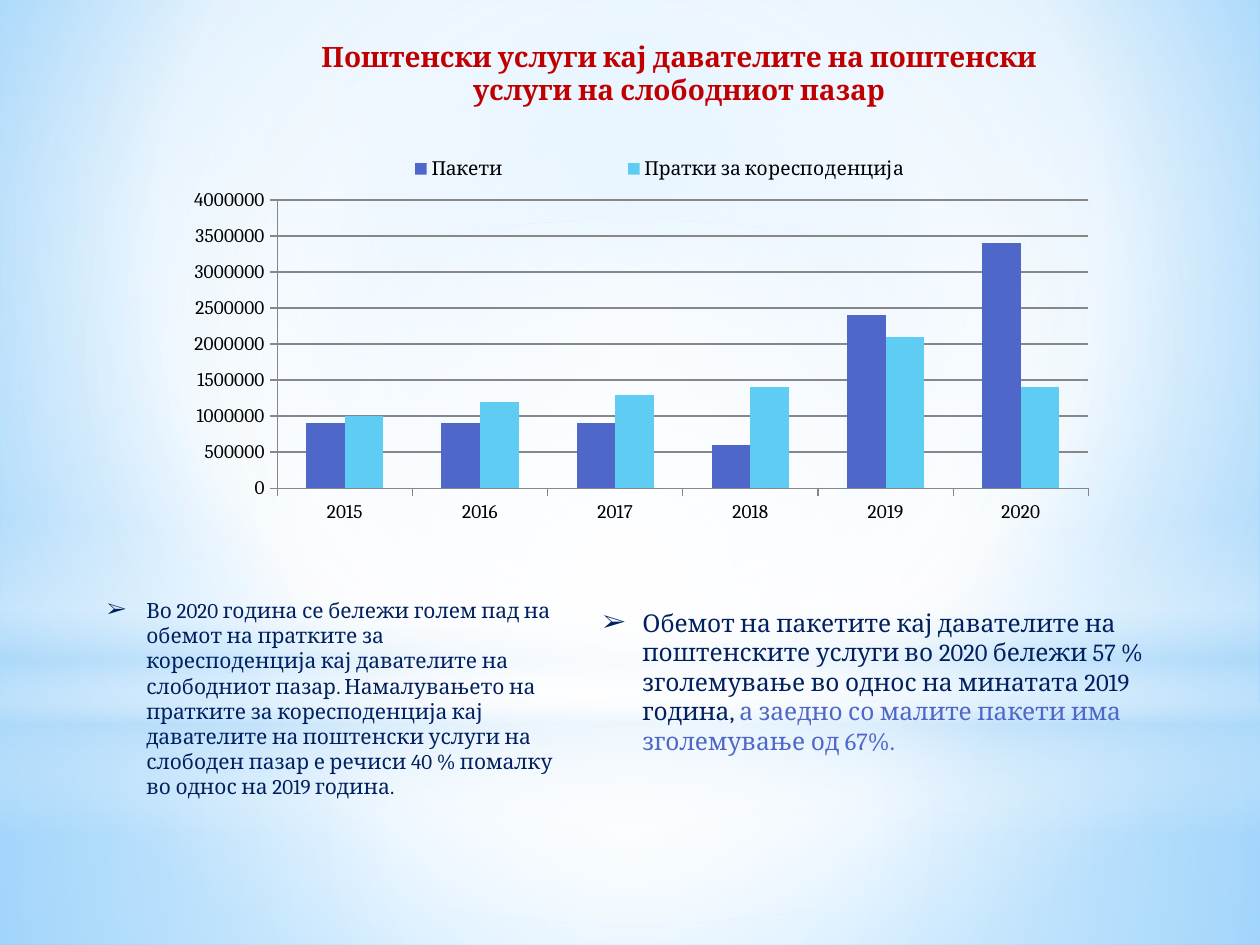
from dataclasses import dataclass

from lxml import etree
from pptx import Presentation
from pptx import util as u
from pptx.chart.data import CategoryChartData
from pptx.dml.color import RGBColor
from pptx.enum import chart as ch, shapes, text
from pptx.oxml import parse_xml
from pptx.oxml.ns import nsdecls, qn


@dataclass(frozen=True)
class Theme:
    font: str = "Cambria"
    chart_font: str = "Roboto"
    title: str = "C00000"
    body: str = "002060"
    parcels: str = "4E67C8"
    letters: str = "5ECCF3"
    grid: str = "878787"
    black: str = "000000"
    white: str = "FFFFFF"
    haze: str = "B4DCFA"
    sky: str = "9ED5FF"
    deep_sky: str = "5BB9FF"
    title_size: int = 16
    chart_base_size: int = 18
    chart_size: int = 11
    left_size: int = 12
    right_size: int = 14


T = Theme()
rgb = RGBColor.from_string


def paint(fill, owner, stops, focus=None):
    """Fill with (position, colour, opacity) stops: radial round focus, else downwards."""
    fill.gradient()
    grad = next(owner.iter(qn("a:gradFill")))
    gs = "".join(
        f'<a:gs pos="{pos * 1000}"><a:srgbClr val="{color}">'
        f'<a:alpha val="{alpha * 1000}"/></a:srgbClr></a:gs>'
        for pos, color, alpha in stops)
    if focus:
        sides = " ".join(f'{k}="{v * 1000}"' for k, v in zip("ltrb", focus))
        shade = f'<a:path path="circle"><a:fillToRect {sides}/></a:path>'
    else:
        shade = '<a:lin ang="5400000" scaled="0"/>'
    grad.getparent().replace(grad, parse_xml(
        f'<a:gradFill {nsdecls("a")} rotWithShape="1">'
        f'<a:gsLst>{gs}</a:gsLst>{shade}</a:gradFill>'))


def chart_layout(x, y, w, h, inner=False):
    """Manual chart layout, in fractions of the chart area."""
    target = '<c:layoutTarget val="inner"/>' if inner else ""
    return parse_xml(
        f'<c:layout {nsdecls("c")}><c:manualLayout>{target}'
        '<c:xMode val="edge"/><c:yMode val="edge"/>'
        f'<c:x val="{x}"/><c:y val="{y}"/><c:w val="{w}"/><c:h val="{h}"/>'
        '</c:manualLayout></c:layout>')


prs = Presentation()
prs.slide_width, prs.slide_height = u.Cm(25.4), u.Cm(19.05)
s = prs.slides.add_slide(prs.slide_layouts[5])

# Background: a sky with soft bands of light
bg = s.background.fill
paint(bg, s.element, [(0, T.sky, 100), (60, T.white, 100), (100, T.deep_sky, 100)],
      (20, 10, 20, 60))

centre = (50, 50, 50, 50)
rect, oval = shapes.MSO_SHAPE.RECTANGLE, shapes.MSO_SHAPE.OVAL
lights = [
    (rect, 14.17, 4.88, [(0, T.white, 91), (37, T.white, 76), (100, T.haze, 79)], centre),
    (rect, 0, 14.17, [(0, T.white, 89), (48, T.white, 62), (100, T.haze, 79)], centre),
    (rect, 10.46, 6.35, [(0, T.white, 0), (29, T.white, 30), (45, T.haze, 40),
                         (55, T.white, 26), (65, T.haze, 60), (100, T.white, 0)], None),
    (oval, 4.45, 14.17, [(0, T.white, 100), (56, T.white, 0)], centre),
]
for kind, top, height, stops, focus in lights:
    sp = s.shapes.add_shape(kind, 0, u.Cm(top), prs.slide_width, u.Cm(height))
    sp.shadow.inherit = False
    sp.line.fill.background()
    paint(sp.fill, sp.element, stops, focus)

# Title, brought in front of the bands
title = s.shapes.title
s.shapes.element.append(title.element)
title.left, title.top, title.width, title.height = map(u.Cm, (6.1, 0.66, 15.19, 1.63))
tf = title.text_frame
tf.text = "Поштенски услуги кај давателите на поштенски услуги на слободниот пазар"
tf.word_wrap = True
tf.auto_size = text.MSO_AUTO_SIZE.SHAPE_TO_FIT_TEXT
tf.vertical_anchor = text.MSO_ANCHOR.TOP
p = tf.paragraphs[0]
p.alignment = text.PP_ALIGN.CENTER
p.font.name, p.font.size, p.font.bold = T.font, u.Pt(T.title_size), True
p.font.color.rgb = rgb(T.title)

# Chart
data = CategoryChartData(number_format="0")
data.categories = [str(year) for year in range(2015, 2021)]
data.add_series("Пакети", [900000, 900000, 900000, 600000, 2400000, 3400000])
data.add_series("Пратки за коресподенција",
                [1000000, 1200000, 1300000, 1400000, 2100000, 1400000])
chart = s.shapes.add_chart(ch.XL_CHART_TYPE.COLUMN_CLUSTERED, u.Cm(3.52), u.Cm(2.94),
                           u.Cm(18.8), u.Cm(8.42), data).chart
chart.has_title = False
chart.font.name, chart.font.size = T.chart_font, u.Pt(T.chart_base_size)
chart.font.color.rgb = rgb(T.black)

plot = chart.plots[0]
plot.gap_width, plot.overlap, plot.vary_by_categories = 150, 0, False
for series, color in zip(plot.series, (T.parcels, T.letters)):
    series.format.fill.solid()
    series.format.fill.fore_color.rgb = rgb(color)

chart.has_legend = True
legend = chart.legend
legend.position = ch.XL_LEGEND_POSITION.RIGHT
legend.include_in_layout = False

cat, val = chart.category_axis, chart.value_axis
val.minimum_scale, val.maximum_scale, val.major_unit = 0, 4000000, 500000
val.has_major_gridlines = True
for axis in (cat, val):
    axis.major_tick_mark = ch.XL_TICK_MARK.OUTSIDE
    axis.minor_tick_mark = ch.XL_TICK_MARK.NONE
for line in (cat.format.line, val.format.line, val.major_gridlines.format.line):
    line.color.rgb = rgb(T.grid)
    line.width = u.Pt(0.75)
for font in (legend.font, cat.tick_labels.font, val.tick_labels.font):
    font.name, font.size = T.font, u.Pt(T.chart_size)
    font.color.rgb = rgb(T.black)

area = next(chart.element.iter(qn("c:plotArea")))
key = next(chart.element.iter(qn("c:legend")))
for old in area.findall(qn("c:layout")) + key.findall(qn("c:layout")):
    old.getparent().remove(old)
area.insert(0, chart_layout(0.11, 0.13, 0.87, 0.69, inner=True))
key.find(qn("c:legendPos")).addnext(chart_layout(0.13, 0.01, 0.78, 0.09))

# Comments under the chart
comments = [
    ((1.91, 11.92, 9.5, 4.37), T.left_size, [
        ("Во 2020 година се бележи голем пад на обемот на пратките за коресподенција "
         "кај давателите на слободниот пазар. Намалувањето на пратките за "
         "коресподенција кај давателите на поштенски услуги на слободен пазар е "
         "речиси 40 % помалку во однос на 2019 година.", T.body)]),
    ((11.91, 12.13, 12.7, 3.25), T.right_size, [
        ("Обемот на пакетите кај давателите на поштенските услуги во 2020 бележи "
         "57 % зголемување во однос на минатата 2019 година, ", T.body),
        ("а заедно со малите пакети има зголемување од 67%.", T.parcels)]),
]
for box, size, runs in comments:
    tf = s.shapes.add_textbox(*map(u.Cm, box)).text_frame
    tf.word_wrap = True
    tf.auto_size = text.MSO_AUTO_SIZE.SHAPE_TO_FIT_TEXT
    p = tf.paragraphs[0]
    p.font.name, p.font.size = T.font, u.Pt(size)
    for words, color in runs:
        r = p.add_run()
        r.text = words
        r.font.color.rgb = rgb(color)
    pPr = p._p.get_or_add_pPr()
    pPr.set("marL", str(u.Cm(0.79)))
    pPr.set("indent", str(-u.Cm(0.79)))
    pPr.insert(0, etree.Element(qn("a:buFont"), typeface=T.font))
    pPr.insert(1, etree.Element(qn("a:buChar"), char="➢"))

prs.save("out.pptx")
